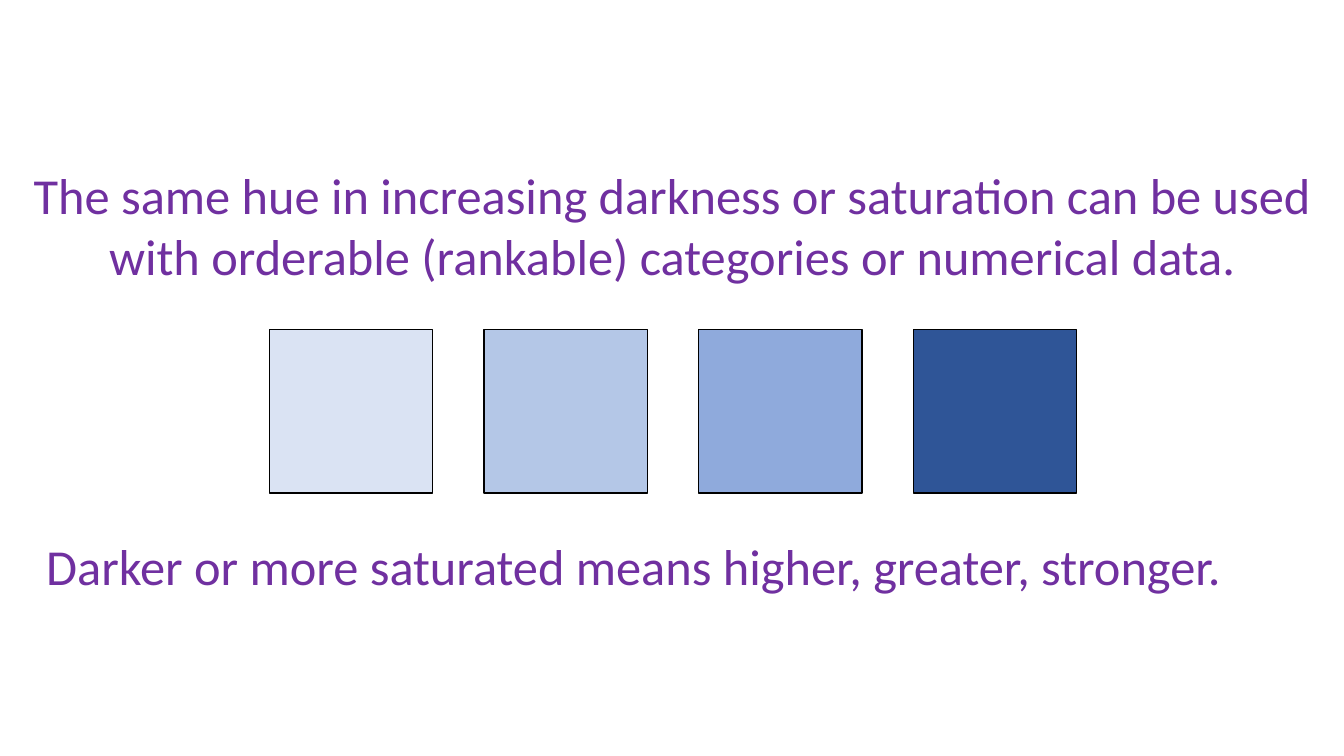
from dataclasses import dataclass

from pptx import Presentation
from pptx.dml.color import RGBColor
from pptx.enum.shapes import MSO_SHAPE
from pptx.enum.text import PP_ALIGN
from pptx.slide import Slide
from pptx.util import Emu, Pt

RECTANGLE = MSO_SHAPE.RECTANGLE
LEFT, CENTER = PP_ALIGN.LEFT, PP_ALIGN.CENTER
EMU_PER_PX = 9144  # 100 px to the inch
BLANK_LAYOUT = 6


@dataclass(frozen=True)
class Theme:
    font: str = "Calibri"
    text_size: int = 36
    text: str = "7030A0"
    outline: str = "000000"
    outline_width: int = 1
    hue_steps: tuple[str, ...] = ("DAE3F3", "B4C7E7", "8FAADC", "2F5597")


@dataclass(frozen=True)
class Caption:
    text: str
    left: int
    top: int
    width: int
    height: int
    align: PP_ALIGN


THEME = Theme()
SWATCH_LEFT, SWATCH_TOP, SWATCH_SIZE, SWATCH_PITCH = 267, 327, 162, 213
CAPTIONS = (
    Caption(
        "The same hue in increasing darkness or saturation can be used "
        "with orderable (rankable) categories or numerical data.",
        15, 158, 1304, 131, CENTER,
    ),
    Caption(
        "Darker or more saturated means higher, greater, stronger.",
        36, 526, 1262, 71, LEFT,
    ),
)


def px(length: int) -> Emu:
    return Emu(length * EMU_PER_PX)


def add_swatch(slide: Slide, left: int, color: str) -> None:
    sp = slide.shapes.add_shape(
        RECTANGLE, px(left), px(SWATCH_TOP), px(SWATCH_SIZE), px(SWATCH_SIZE)
    )
    sp.shadow.inherit = False
    sp.fill.solid()
    sp.fill.fore_color.rgb = RGBColor.from_string(color)
    sp.line.color.rgb = RGBColor.from_string(THEME.outline)
    sp.line.width = Pt(THEME.outline_width)


def add_caption(slide: Slide, caption: Caption) -> None:
    sp = slide.shapes.add_textbox(
        px(caption.left), px(caption.top), px(caption.width), px(caption.height)
    )
    tf = sp.text_frame
    tf.word_wrap = True
    p = tf.paragraphs[0]
    p.text = caption.text
    p.alignment = caption.align
    p.font.name = THEME.font
    p.font.size = Pt(THEME.text_size)
    p.font.color.rgb = RGBColor.from_string(THEME.text)


def main() -> None:
    prs = Presentation()
    prs.slide_width, prs.slide_height = px(1333), px(750)
    slide = prs.slides.add_slide(prs.slide_layouts[BLANK_LAYOUT])
    for i, color in enumerate(THEME.hue_steps):
        add_swatch(slide, SWATCH_LEFT + i * SWATCH_PITCH, color)
    for caption in CAPTIONS:
        add_caption(slide, caption)
    prs.save("out.pptx")


if __name__ == "__main__":
    main()
